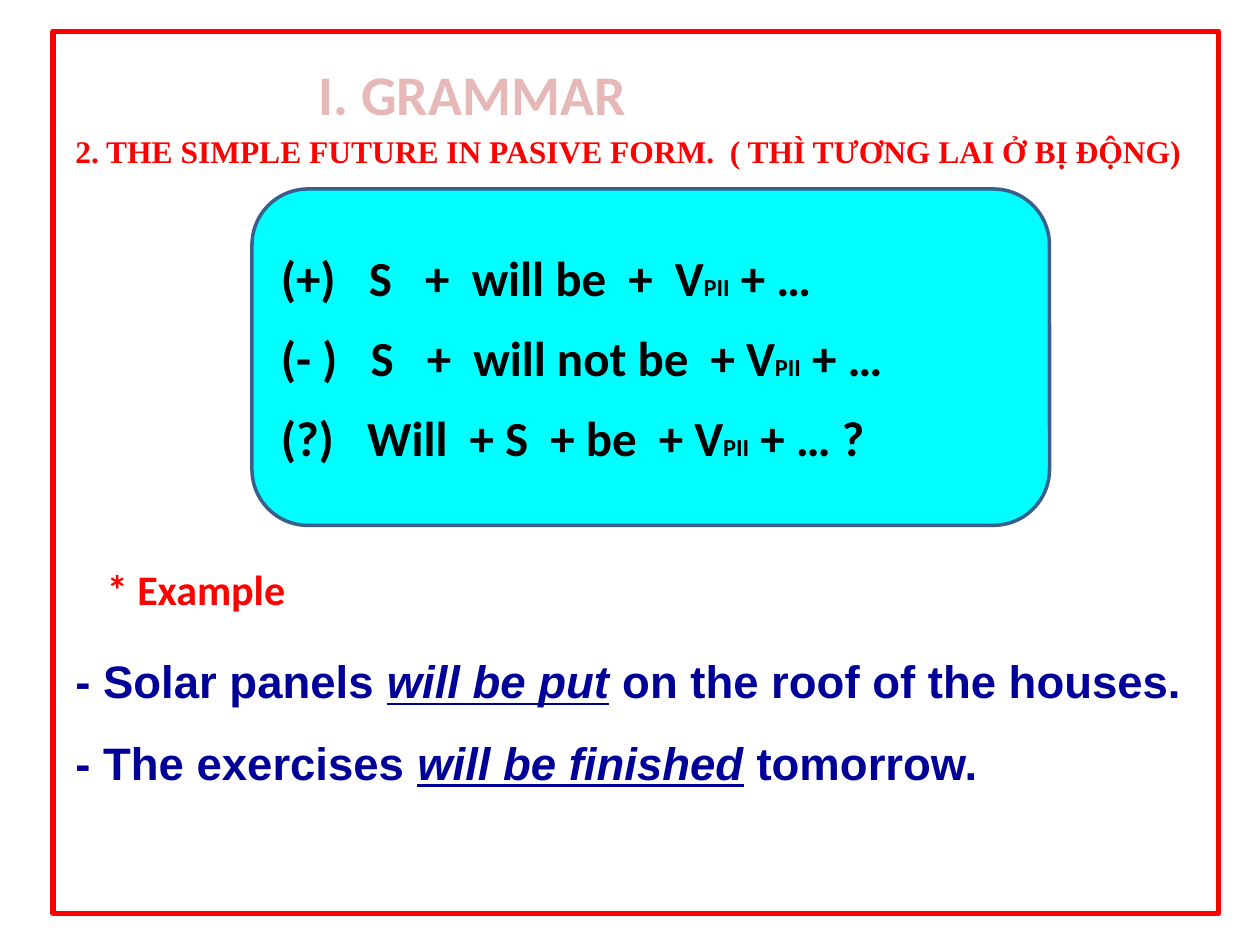
from dataclasses import dataclass

from pptx import Presentation
from pptx.dml.color import RGBColor
from pptx.enum import shapes, text
from pptx.util import Inches, Pt

RED, NAVY, BLACK = "FF0000", "000099", "000000"


@dataclass(frozen=True)
class Box:
    left: float
    top: float
    width: float
    height: float

    def lengths(self) -> tuple:
        return tuple(Inches(v) for v in (self.left, self.top, self.width, self.height))


@dataclass(frozen=True)
class Part:
    """A stretch of text; size None means the size of its line."""
    words: str
    size: float | None = None
    emphasis: bool = False


def color(hex_value: str) -> RGBColor:
    return RGBColor.from_string(hex_value)


def write(frame, lines: list[list[Part]], *, font: str, size: float, ink: str,
          align=text.PP_ALIGN.LEFT, wrap: bool = True, gap: float = 0,
          line_spacing: float = 1.0, anchor=text.MSO_ANCHOR.TOP) -> None:
    """Fill a text frame with bold lines, one paragraph each."""
    frame.word_wrap = wrap
    frame.vertical_anchor = anchor
    for number, parts in enumerate(lines):
        paragraph = frame.add_paragraph() if number else frame.paragraphs[0]
        paragraph.alignment = align
        paragraph.space_before = paragraph.space_after = Pt(gap)
        paragraph.line_spacing = line_spacing
        for part in parts:
            run = paragraph.add_run()
            run.text = part.words
            run.font.name = font
            run.font.size = Pt(part.size or size)
            run.font.bold = True
            run.font.italic = run.font.underline = part.emphasis
            run.font.color.rgb = color(ink)


def add_label(slide, box: Box, lines: list[list[Part]], **style) -> None:
    write(slide.shapes.add_textbox(*box.lengths()).text_frame, lines, **style)


def add_panel(slide, kind, box: Box, line: str, line_width: float, fill: str | None = None):
    panel = slide.shapes.add_shape(kind, *box.lengths())
    panel.shadow.inherit = False
    panel.line.color.rgb = color(line)
    panel.line.width = Pt(line_width)
    if fill:
        panel.fill.solid()
        panel.fill.fore_color.rgb = color(fill)
    else:
        panel.fill.background()
    return panel


def formula(start: str, end: str) -> list[Part]:
    return [Part(start), Part("PII", size=14), Part(end)]


def example(subject: str, verb: str, rest: str) -> list[Part]:
    return [Part(subject), Part(verb, emphasis=True), Part(rest)]


def main() -> None:
    deck = Presentation()
    deck.slide_width, deck.slide_height = Inches(10), Inches(7.5)
    slide = deck.slides.add_slide(deck.slide_layouts[6])

    add_panel(slide, shapes.MSO_SHAPE.RECTANGLE, Box(0.42, 0.25, 9.25, 7), RED, 3)
    add_label(slide, Box(2.42, 0.42, 2.66, 0.64), [[Part("I. GRAMMAR")]],
              font="Calibri", size=32, ink="E6B9B8",
              align=text.PP_ALIGN.CENTER, wrap=False)
    add_label(slide, Box(0.5, 1, 9, 0.4),
              [[Part("2. THE SIMPLE FUTURE IN PASIVE FORM.  ( THÌ TƯƠNG LAI Ở BỊ ĐỘNG)")]],
              font="Times New Roman", size=18, ink=RED)

    rules = add_panel(slide, shapes.MSO_SHAPE.ROUNDED_RECTANGLE,
                      Box(2, 1.5, 6.33, 2.67), "3A5F8C", 2, fill="00FFFF")
    write(rules.text_frame,
          [formula("(+)   S   +  will be  +  V", " + …"),
           formula("(- )   S   +  will not be  + V", " + …"),
           formula("(?)   Will  + S  + be  + V", " + … ?")],
          font="Calibri", size=28, ink=BLACK, gap=6, anchor=text.MSO_ANCHOR.MIDDLE)

    add_label(slide, Box(0.5, 4.92, 9.17, 1.41),
              [example("- Solar panels ", "will be put", " on the roof of the houses."),
               example("- The exercises ", "will be finished", " tomorrow.")],
              font="Arial", size=26, ink=NAVY, line_spacing=1.5)
    add_label(slide, Box(0.75, 4.42, 2.08, 0.5), [[Part("* Example")]],
              font="Calibri", size=24, ink=RED)

    deck.save("out.pptx")


if __name__ == "__main__":
    main()
